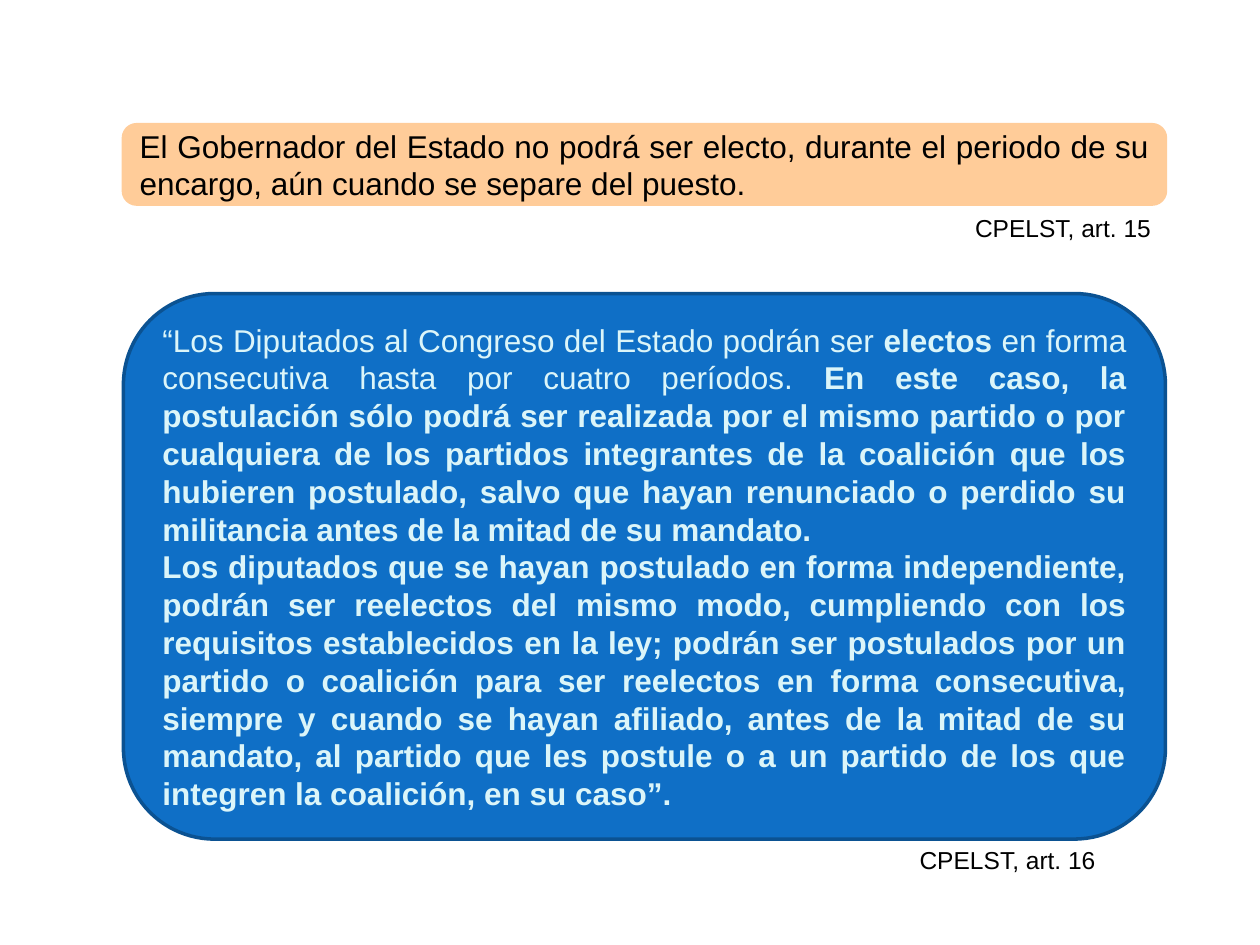
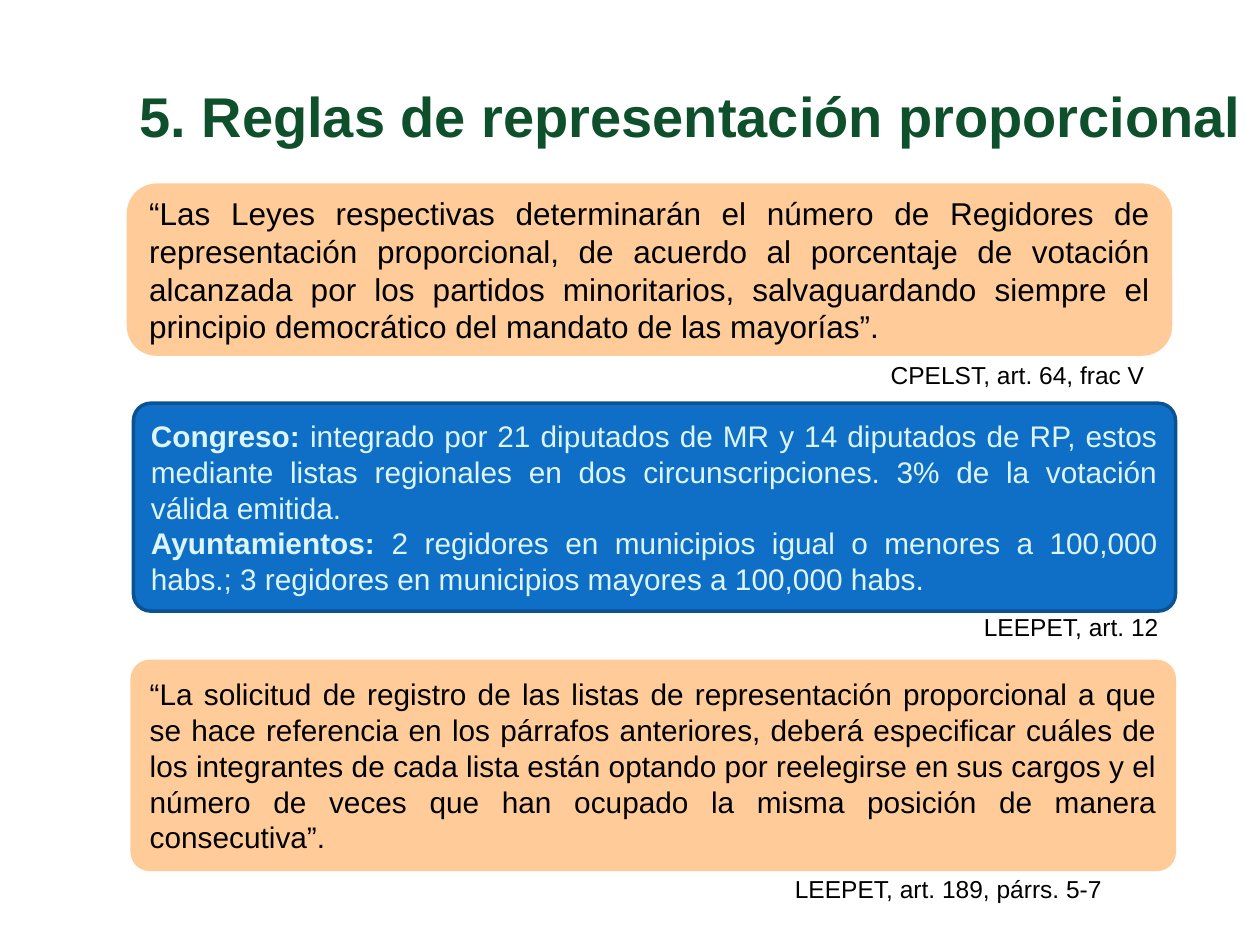
from dataclasses import dataclass

from pptx import Presentation
from pptx import util as u
from pptx.dml.color import RGBColor
from pptx.enum import shapes, text


@dataclass(frozen=True)
class Theme:
    font: str = "Arial"
    ink: str = "000000"
    title_color: str = "0E502B"
    title_size: int = 32
    source_size: int = 14
    line_width: int = 2


THEME = Theme()
# Panel styles: fill, line, text colour
PEACH = ("FFCC99", "FFCC99", THEME.ink)
BLUE = ("0F6FC6", "0B5292", "DBF5F9")
PANEL_WIDTH = 8.27
ROUND, SLIGHT = 0.16667, 0.083

# Content: paragraphs are lists of (text, bold) spans
DEPUTIES = [
    [("“Los Diputados al Congreso del Estado podrán ser ", False),
     ("electos ", True),
     ("en forma consecutiva hasta por cuatro períodos. ", False),
     ("En este caso, la postulación sólo podrá ser realizada por el mismo partido o por "
      "cualquiera de los partidos integrantes de la coalición que los hubieren postulado, "
      "salvo que hayan renunciado o perdido su militancia antes de la mitad de su mandato.",
      True)],
    [("Los diputados que se hayan postulado en forma independiente, podrán ser reelectos del "
      "mismo modo, cumpliendo con los requisitos establecidos en la ley; podrán ser postulados "
      "por un partido o coalición para ser reelectos en forma consecutiva, siempre y cuando se "
      "hayan afiliado, antes de la mitad de su mandato, al partido que les postule o a un "
      "partido de los que integren la coalición, en su caso”.", True)],
]
GOVERNOR = [[("El Gobernador del Estado no podrá ser electo, durante el periodo de su encargo, "
              "aún cuando se separe del puesto.", False)]]
COUNCILLORS = [[("“Las Leyes respectivas determinarán el número de Regidores de representación "
                 "proporcional, de acuerdo al porcentaje de votación alcanzada por los partidos "
                 "minoritarios, salvaguardando siempre el principio democrático del mandato de "
                 "las mayorías”.", False)]]
SEATS = [
    [("Congreso: ", True),
     ("integrado por 21 diputados de MR y 14 diputados de RP, estos mediante listas regionales "
      "en dos circunscripciones. 3% de la votación válida emitida. ", False)],
    [("Ayuntamientos: ", True),
     ("2 regidores en municipios igual o menores a 100,000 habs.; 3 regidores en municipios "
      "mayores a 100,000 habs.", False)],
]
LISTS = [[("“La solicitud de registro de las listas de representación proporcional a que se hace "
           "referencia en los párrafos anteriores, deberá especificar cuáles de los integrantes "
           "de cada lista están optando por reelegirse en sus cargos y el número de veces que "
           "han ocupado la misma posición de manera consecutiva”.", False)]]

# Panel: style, left, top, height, rounding, text size, paragraphs
# Source: text, left, top, width
SLIDES = [
    {"title": None,
     "panels": [(PEACH, 0.98, 0.99, 0.63, ROUND, 18, GOVERNOR),
                (BLUE, 0.98, 2.33, 4.33, ROUND, 18, DEPUTIES)],
     "sources": [("CPELST, art. 15", 7.64, 1.64, 1.63),
                 ("CPELST, art. 16", 7.2, 6.66, 1.63)]},
    {"title": "5. Reglas de representación proporcional",
     "panels": [(PEACH, 1.02, 1.47, 1.34, ROUND, 18, COUNCILLORS),
                (BLUE, 1.06, 3.2, 1.65, SLIGHT, 17, SEATS),
                (PEACH, 1.05, 5.25, 1.65, SLIGHT, 17, LISTS)],
     "sources": [("CPELST, art. 64, frac V", 6.97, 2.81, 2.25),
                 ("LEEPET, art. 12", 7.71, 4.81, 1.62),
                 ("LEEPET, art. 189, párrs. 5-7", 6.21, 6.89, 2.65)]},
]


def inches(*lengths):
    return [u.Inches(length) for length in lengths]


def style_span(span, size, color, bold=False):
    span.font.name = THEME.font
    span.font.size = u.Pt(size)
    span.font.bold = bold
    span.font.color.rgb = RGBColor.from_string(color)


def add_panel(page, style, left, top, height, rounding, size, paragraphs):
    fill, line, color = style
    box = page.shapes.add_shape(shapes.MSO_SHAPE.ROUNDED_RECTANGLE,
                                *inches(left, top, PANEL_WIDTH, height))
    box.adjustments[0] = rounding
    box.shadow.inherit = False
    box.fill.solid()
    box.fill.fore_color.rgb = RGBColor.from_string(fill)
    box.line.color.rgb = RGBColor.from_string(line)
    box.line.width = u.Pt(THEME.line_width)
    frame = box.text_frame
    frame.word_wrap = True
    frame.vertical_anchor = text.MSO_ANCHOR.MIDDLE
    for index, spans in enumerate(paragraphs):
        para = frame.add_paragraph() if index else frame.paragraphs[0]
        para.alignment = text.PP_ALIGN.JUSTIFY
        for words, bold in spans:
            span = para.add_run()
            span.text = words
            style_span(span, size, color, bold)


def add_label(page, words, place, size, color, bold=False):
    box = page.shapes.add_textbox(*inches(*place))
    box.text_frame.text = words
    style_span(box.text_frame.paragraphs[0].runs[0], size, color, bold)
    return box.text_frame


def add_title(page, words):
    frame = add_label(page, words, (0.96, 0.55, 9, 0.7),
                      THEME.title_size, THEME.title_color, True)
    frame.word_wrap = True
    frame.margin_top = frame.margin_bottom = u.Inches(0.1)
    frame.paragraphs[0].alignment = text.PP_ALIGN.RIGHT


def add_source(page, words, *place):
    frame = add_label(page, words, (*place, 0.34), THEME.source_size, THEME.ink)
    frame.word_wrap = False
    frame.auto_size = text.MSO_AUTO_SIZE.SHAPE_TO_FIT_TEXT


def main():
    deck = Presentation()
    deck.slide_width, deck.slide_height = inches(10, 7.5)
    for content in SLIDES:
        page = deck.slides.add_slide(deck.slide_layouts[6])
        if content["title"]:
            add_title(page, content["title"])
        for panel in content["panels"]:
            add_panel(page, *panel)
        for source in content["sources"]:
            add_source(page, *source)
    deck.save("out.pptx")


if __name__ == "__main__":
    main()
